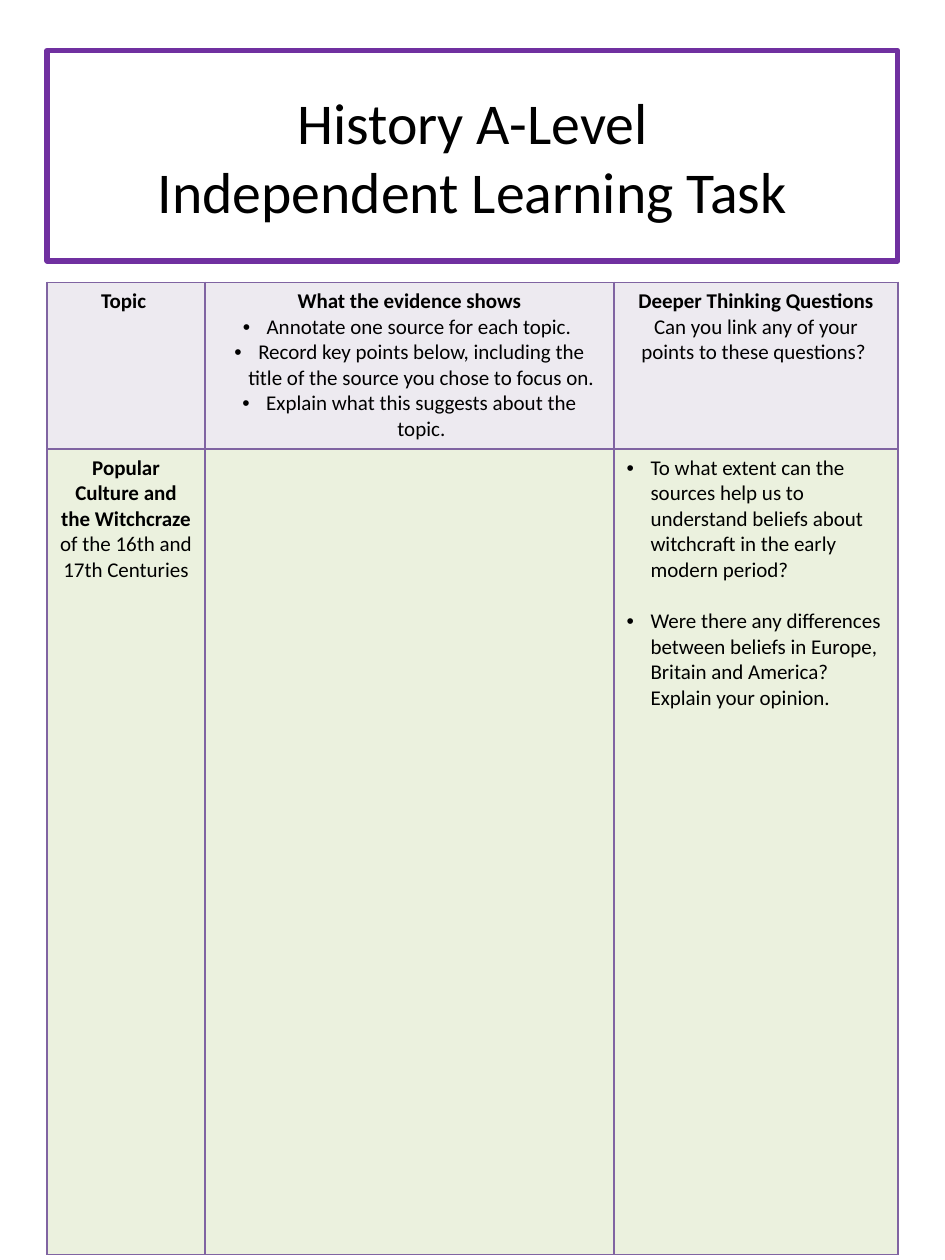
from lxml import etree
from pptx import Presentation
from pptx.dml.color import RGBColor
from pptx.enum.text import MSO_ANCHOR, MSO_AUTO_SIZE, PP_ALIGN
from pptx.oxml.ns import qn
from pptx.util import Cm, Pt

LEFT, CENTER = PP_ALIGN.LEFT, PP_ALIGN.CENTER
MIDDLE, TOP = MSO_ANCHOR.MIDDLE, MSO_ANCHOR.TOP
NO_AUTOFIT = MSO_AUTO_SIZE.NONE

THEME = {
    "font": "Calibri",
    "text": RGBColor.from_string("000000"),
    "frame": RGBColor.from_string("7030A0"),
    "border": "8064A2",
    "rows": [RGBColor.from_string("EDEAF0"), RGBColor.from_string("EBF1DE")],
    "title_size": Pt(33),
    "body_size": Pt(12),
    "frame_width": Pt(3),
    "border_width": Pt(1),
}
MARGIN = Cm(0.95)
COLUMN_WIDTHS = [Cm(3.18), Cm(8.25), Cm(5.72)]
ROW_HEIGHTS = [Cm(3.36), Cm(16.24)]
TABLE_WIDTH = sum(COLUMN_WIDTHS)
INDENT = Cm(0.48)
QUESTION_GAP = Pt(14.6)

# Each paragraph: alignment, bulleted, space before, [(text, bold), ...]
CELLS = [
    [
        [(CENTER, False, 0, [("Topic ", True)])],
        [
            (CENTER, False, 0, [("What the evidence shows", True)]),
            (CENTER, True, 0, [("Annotate one source for each topic. ", False)]),
            (CENTER, True, 0, [("Record key points below, including the title of "
                                "the source you chose to focus on.", False)]),
            (CENTER, True, 0, [("Explain what this suggests about the topic.", False)]),
        ],
        [
            (CENTER, False, 0, [("Deeper Thinking Questions", True)]),
            (CENTER, False, 0, [("Can you link any of your points to these "
                                 "questions? ", False)]),
        ],
    ],
    [
        [(CENTER, False, 0, [("Popular Culture and the Witchcraze ", True),
                             ("of the 16th and 17th Centuries", False)])],
        [],
        [
            (LEFT, True, 0, [("To what extent can the sources help us to understand "
                              "beliefs about witchcraft in the early modern period?",
                              False)]),
            (LEFT, True, QUESTION_GAP, [("Were there any differences between beliefs "
                                         "in Europe, Britain and America? Explain your "
                                         "opinion.", False)]),
        ],
    ],
]


def format_font(font, size, bold):
    values = {"name": THEME["font"], "size": size, "bold": bold}
    for name, value in values.items():
        setattr(font, name, value)
    font.color.rgb = THEME["text"]


presentation = Presentation()
presentation.slide_width = Cm(19.05)
presentation.slide_height = Cm(25.4)
slide = presentation.slides.add_slide(presentation.slide_layouts[5])

# Framed title
title = slide.shapes.title
title_place = {"left": MARGIN, "top": Cm(1.02), "width": TABLE_WIDTH, "height": Cm(4.24)}
for name, value in title_place.items():
    setattr(title, name, value)
title.line.color.rgb = THEME["frame"]
title.line.width = THEME["frame_width"]
title_frame = title.text_frame
title_frame.text = "History A-Level\vIndependent Learning Task"
title_format = {"word_wrap": True, "auto_size": NO_AUTOFIT, "vertical_anchor": MIDDLE}
for name, value in title_format.items():
    setattr(title_frame, name, value)
title_paragraph = title_frame.paragraphs[0]
title_paragraph.alignment = CENTER
for run in title_paragraph.runs:
    format_font(run.font, THEME["title_size"], False)

# Task table
table = slide.shapes.add_table(
    len(ROW_HEIGHTS), len(COLUMN_WIDTHS), MARGIN, Cm(5.69), TABLE_WIDTH, sum(ROW_HEIGHTS)
).table
table.first_row = False
table.horz_banding = False
for column, width in zip(table.columns, COLUMN_WIDTHS):
    column.width = width
for row, height in zip(table.rows, ROW_HEIGHTS):
    row.height = height

for row_index, row_content in enumerate(CELLS):
    for column_index, paragraphs in enumerate(row_content):
        cell = table.cell(row_index, column_index)
        cell.vertical_anchor = TOP

        # Borders come before the fill in the cell properties
        cell_properties = cell._tc.get_or_add_tcPr()
        for side in ("a:lnL", "a:lnR", "a:lnT", "a:lnB"):
            border = etree.SubElement(cell_properties, qn(side), w=str(THEME["border_width"]))
            border_fill = etree.SubElement(border, qn("a:solidFill"))
            etree.SubElement(border_fill, qn("a:srgbClr"), val=THEME["border"])
        cell.fill.solid()
        cell.fill.fore_color.rgb = THEME["rows"][row_index]

        # Cell text
        text_frame = cell.text_frame
        format_font(text_frame.paragraphs[0].font, THEME["body_size"], False)
        for index, (alignment, bulleted, space, runs) in enumerate(paragraphs):
            paragraph = text_frame.add_paragraph() if index else text_frame.paragraphs[0]
            paragraph.alignment = alignment
            paragraph.space_before = space
            if bulleted:
                properties = paragraph._p.get_or_add_pPr()
                properties.set("marL", str(INDENT))
                properties.set("indent", str(-INDENT))
                bullet_font = etree.Element(qn("a:buFont"), typeface="Arial")
                bullet = etree.Element(qn("a:buChar"), char="•")
                properties.find(qn("a:spcBef")).addnext(bullet_font)
                bullet_font.addnext(bullet)
            for text, bold in runs:
                run = paragraph.add_run()
                run.text = text
                format_font(run.font, THEME["body_size"], bold)

presentation.save("out.pptx")
